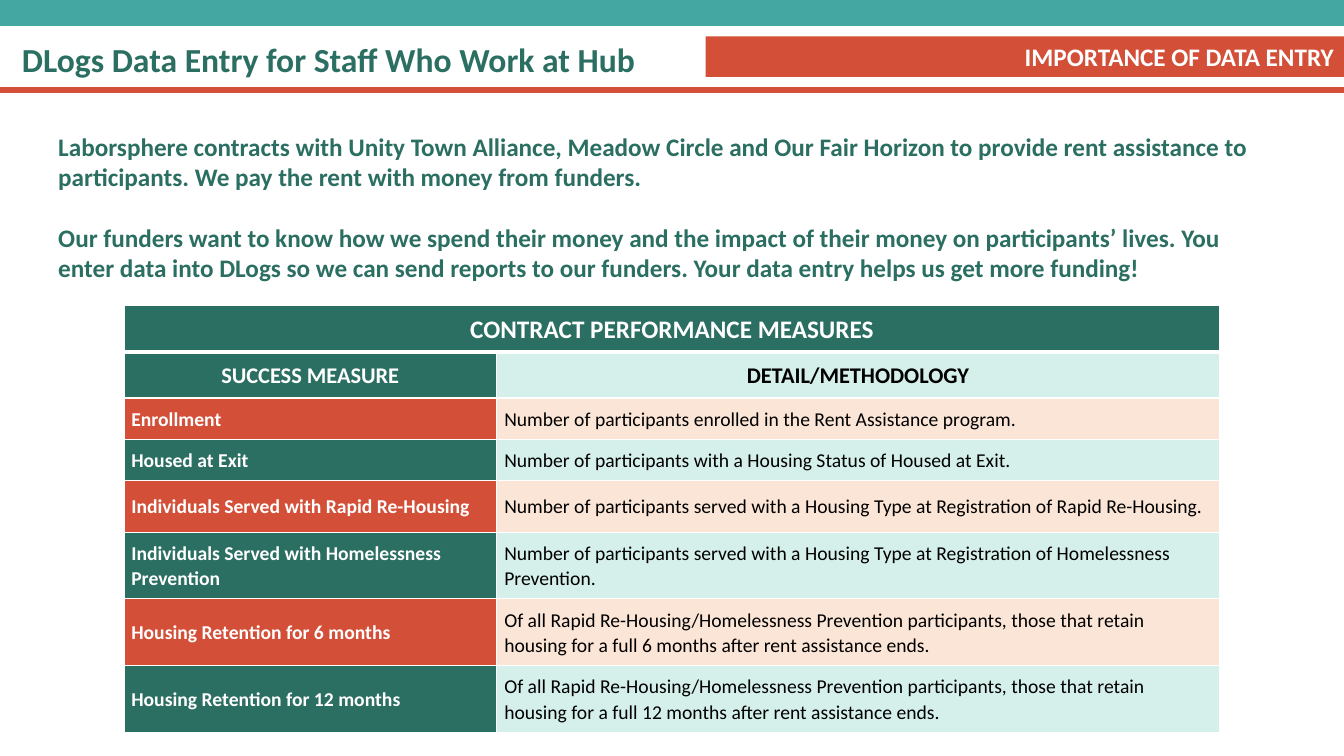
from pptx import Presentation
from pptx.dml.color import RGBColor
from pptx.enum.shapes import MSO_CONNECTOR, MSO_SHAPE
from pptx.enum.text import MSO_ANCHOR, MSO_AUTO_SIZE, PP_ALIGN
from pptx.oxml.ns import qn
from pptx.util import Pt
from lxml.etree import SubElement

GREEN = RGBColor(0x2B, 0x6E, 0x62)
RED = RGBColor(0xD3, 0x4F, 0x38)
TEAL = RGBColor(0x45, 0xA7, 0xA2)
MINT = RGBColor(0xD5, 0xEF, 0xEA)
PEACH = RGBColor(0xFB, 0xE5, 0xD6)
WHITE = RGBColor(0xFF, 0xFF, 0xFF)
BLACK = RGBColor(0, 0, 0)

WIDTH = 960
INTRO = [
    "Laborsphere contracts with Unity Town Alliance, Meadow Circle and Our Fair Horizon "
    "to provide rent assistance to participants. We pay the rent with money from funders.",
    "Our funders want to know how we spend their money and the impact of their money on "
    "participants’ lives. You enter data into DLogs so we can send reports to our funders. "
    "Your data entry helps us get more funding!",
]
RETAIN = ("Of all Rapid Re-Housing/Homelessness Prevention participants, those that retain "
          "housing for a full {} months after rent assistance ends.")
SERVED = "Number of participants served with a Housing Type at Registration of {}."
GOALS = [
    ("Enrollment", "Number of participants enrolled in the Rent Assistance program.", 29.3),
    ("Housed at Exit", "Number of participants with a Housing Status of Housed at Exit.", 29.3),
    ("Individuals Served with Rapid Re-Housing", SERVED.format("Rapid Re-Housing"), 37),
    ("Individuals Served with Homelessness Prevention",
     SERVED.format("Homelessness Prevention"), 47.7),
    ("Housing Retention for 6 months", RETAIN.format(6), 47.7),
    ("Housing Retention for 12 months", RETAIN.format(12), 47.7),
]


def write(par, text, size, color, bold=True, align=PP_ALIGN.LEFT, lead=None):
    par.alignment = align
    if lead:
        par.line_spacing = lead
    run = par.add_run()
    run.text = text
    font = run.font
    font.name = "Calibri"
    font.size = Pt(size)
    font.bold = bold
    font.color.rgb = color


def add_title(slide, text):
    title = slide.shapes.title
    title.left, title.top, title.width, title.height = Pt(8.5), Pt(17.3), Pt(850), Pt(43.2)
    frame = title.text_frame
    frame.auto_size = MSO_AUTO_SIZE.NONE
    frame.vertical_anchor = MSO_ANCHOR.BOTTOM
    write(frame.paragraphs[0], text, 24, GREEN, lead=0.9)


def add_rule(slide, y, color, weight):
    rule = slide.shapes.add_connector(MSO_CONNECTOR.STRAIGHT, 0, Pt(y), Pt(WIDTH), Pt(y))
    rule.line.color.rgb = color
    rule.line.width = Pt(weight)
    SubElement(rule._element.spPr, qn("a:effectLst"))


def add_banner(slide, text):
    left = 504
    box = slide.shapes.add_shape(
        MSO_SHAPE.RECTANGLE, Pt(left), Pt(26), Pt(WIDTH - left), Pt(29))
    box.shadow.inherit = False
    box.fill.solid()
    box.fill.fore_color.rgb = RED
    box.line.fill.background()
    box.text_frame.vertical_anchor = MSO_ANCHOR.MIDDLE
    write(box.text_frame.paragraphs[0], text, 18, WHITE, align=PP_ALIGN.RIGHT)


def add_intro(slide, texts):
    frame = slide.shapes.add_textbox(Pt(34.5), Pt(90), Pt(871), Pt(116.6)).text_frame
    frame.word_wrap = True
    for i, text in enumerate(texts):
        par = frame.add_paragraph() if i else frame.paragraphs[0]
        if i:
            par.space_before = Pt(22)
        write(par, text, 18, GREEN)


def edge(cell, base=1):
    props = cell._tc.get_or_add_tcPr()
    for i, (side, weight) in enumerate(
            [("lnL", 1), ("lnR", 1), ("lnT", 1), ("lnB", base)]):
        line = props.makeelement(qn("a:" + side), {"w": str(Pt(weight))})
        fill = SubElement(line, qn("a:solidFill"))
        SubElement(fill, qn("a:srgbClr"), val=str(WHITE))
        props.insert(i, line)


def fill_cell(cell, text, size, fill, color, bold=True, align=PP_ALIGN.LEFT,
              inset=(5, 0), base=1):
    cell.margin_left = cell.margin_right = Pt(inset[0])
    cell.margin_top = cell.margin_bottom = Pt(inset[1])
    cell.vertical_anchor = MSO_ANCHOR.MIDDLE
    cell.fill.solid()
    cell.fill.fore_color.rgb = fill
    edge(cell, base)
    write(cell.text_frame.paragraphs[0], text, size, color, bold, align, 1.07)


def add_goals(slide, goals):
    highs = [33, 33] + [high for _, _, high in goals]
    wides = [265.7, 516.7]
    grid = slide.shapes.add_table(
        len(highs), len(wides), Pt(88.8), Pt(218.3), Pt(sum(wides)), Pt(sum(highs))).table
    for row, high in zip(grid.rows, highs):
        row.height = Pt(high)
    for col, wide in zip(grid.columns, wides):
        col.width = Pt(wide)
    mid, pad = PP_ALIGN.CENTER, (5.7, 5.7)
    grid.cell(0, 0).merge(grid.cell(0, 1))
    fill_cell(grid.cell(0, 0), "CONTRACT PERFORMANCE MEASURES", 18, GREEN, WHITE,
              align=mid, base=3)
    edge(grid.cell(0, 1), 3)
    fill_cell(grid.cell(1, 0), "SUCCESS MEASURE", 16, GREEN, WHITE, align=mid)
    fill_cell(grid.cell(1, 1), "DETAIL/METHODOLOGY", 16, MINT, BLACK, align=mid, inset=pad)
    for i, (name, detail, _) in enumerate(goals):
        dark, light = (GREEN, MINT) if i % 2 else (RED, PEACH)
        fill_cell(grid.cell(i + 2, 0), name, 14, dark, WHITE)
        fill_cell(grid.cell(i + 2, 1), detail, 14, light, BLACK, bold=False, inset=pad)


def main():
    deck = Presentation()
    deck.slide_width, deck.slide_height = Pt(WIDTH), Pt(540)
    slide = deck.slides.add_slide(deck.slide_layouts[5])
    add_title(slide, "DLogs Data Entry for Staff Who Work at Hub")
    add_rule(slide, 64.4, RED, 4.5)
    add_rule(slide, 8.3, TEAL, 20)
    add_banner(slide, "IMPORTANCE OF DATA ENTRY")
    add_intro(slide, INTRO)
    add_goals(slide, GOALS)
    deck.save("out.pptx")


if __name__ == "__main__":
    main()
